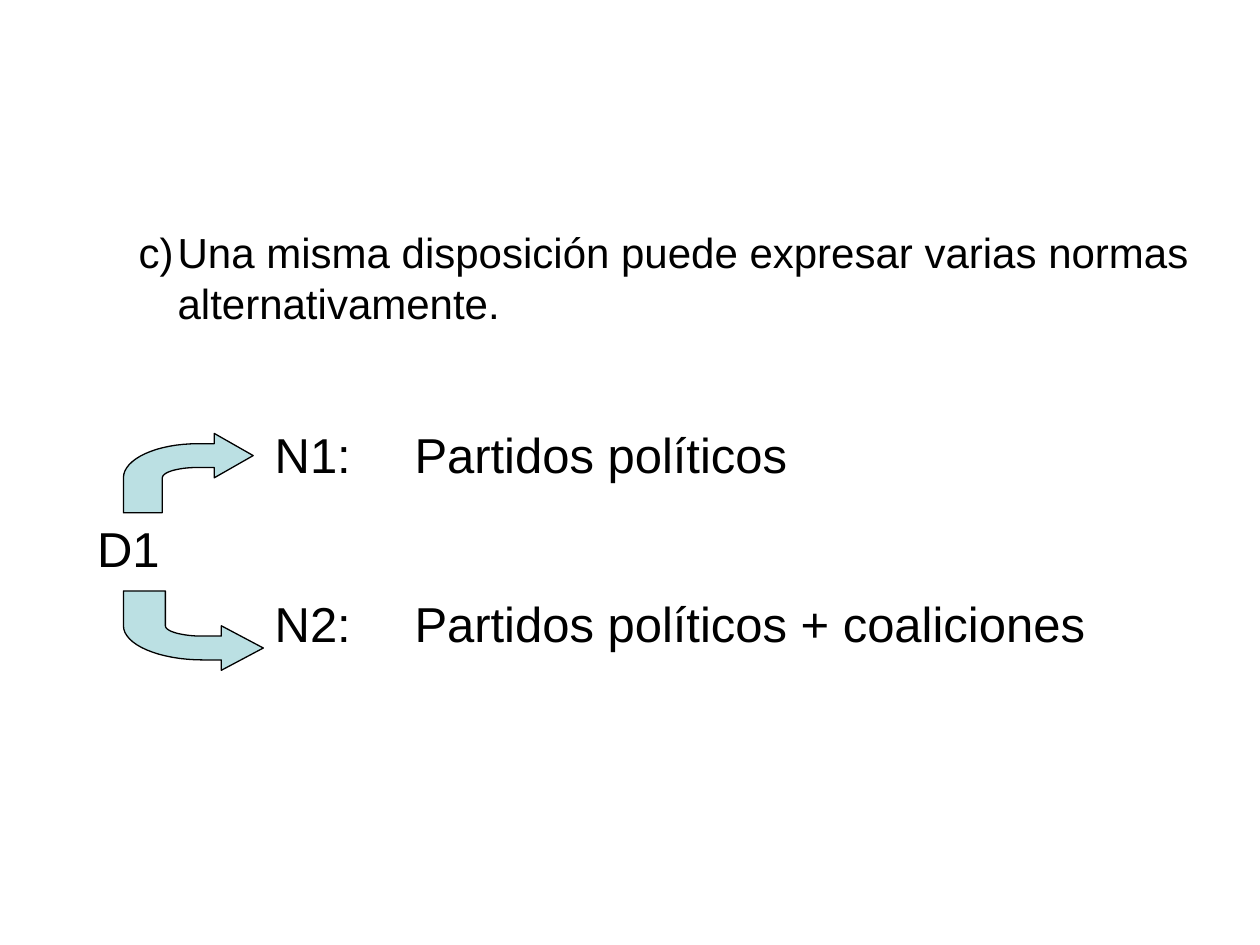
import math
from dataclasses import dataclass

import pptx
import pptx.dml.color
import pptx.enum.text
import pptx.oxml.ns
import pptx.util
from lxml import etree

Inches = pptx.util.Inches
Pt = pptx.util.Pt

BLACK, WHITE, PALE_TEAL = "000000", "FFFFFF", "BBE0E3"


@dataclass
class CurvedArrow:
    left: float
    top: float
    width: float
    height: float
    points_up: bool


@dataclass
class CellText:
    row: int
    column: int
    text: str


ARROWS = [
    CurvedArrow(0.98, 3.44, 1.03, 0.63, points_up=True),
    CurvedArrow(0.98, 4.69, 1.11, 0.63, points_up=False),
]
CELLS = [
    CellText(0, 1, "N1:"),
    CellText(0, 2, "Partidos políticos"),
    CellText(1, 0, "D1"),
    CellText(2, 1, "N2:"),
    CellText(2, 2, "Partidos políticos + coaliciones"),
]
COLUMN_WIDTHS = [1.41, 1.11, 6.3]
ROW_HEIGHTS = [0.74, 0.6, 0.69]


def rgb(color: str) -> pptx.dml.color.RGBColor:
    return pptx.dml.color.RGBColor.from_string(color)


def add_text(paragraph, text: str, *, size: float, font: str = "Arial",
             color: str = BLACK) -> None:
    run = paragraph.add_run()
    run.text = text
    run.font.size = Pt(size)
    run.font.name = font
    run.font.color.rgb = rgb(color)


def fill_body(shape) -> None:
    shape.left, shape.top = Inches(0.5), Inches(1.75)
    shape.width, shape.height = Inches(9.5), Inches(4.95)
    shape.fill.solid()
    shape.fill.fore_color.rgb = rgb(WHITE)
    frame = shape.text_frame
    frame.auto_size = pptx.enum.text.MSO_AUTO_SIZE.NONE
    frame.vertical_anchor = pptx.enum.text.MSO_ANCHOR.TOP
    paragraph = frame.paragraphs[0]
    paragraph.level = 1
    paragraph.space_before = Pt(0)
    properties = paragraph._p.get_or_add_pPr()
    properties.set("marL", str(Inches(0.81)))
    properties.set("indent", str(Inches(-0.31)))
    etree.SubElement(properties, pptx.oxml.ns.qn("a:buNone"))
    add_text(paragraph, "c)\tUna misma disposición puede expresar varias normas alternativamente.",
             size=24)


def add_norm_table(slide) -> None:
    table = slide.shapes.add_table(
        len(ROW_HEIGHTS), len(COLUMN_WIDTHS), Inches(0.67), Inches(3.36),
        Inches(sum(COLUMN_WIDTHS)), Inches(sum(ROW_HEIGHTS))).table
    table.first_row = table.horz_banding = False
    for column, width in zip(table.columns, COLUMN_WIDTHS):
        column.width = Inches(width)
    for row, height in zip(table.rows, ROW_HEIGHTS):
        row.height = Inches(height)
    for cell in table.iter_cells():
        cell.fill.background()
    for item in CELLS:
        paragraph = table.cell(item.row, item.column).text_frame.paragraphs[0]
        add_text(paragraph, item.text, size=28)


def quarter_arc(radius_x: float, radius_y: float, start: int, end: int) -> list[tuple[float, float]]:
    """Return points of the bend, around the centre its two edges share."""
    steps = 16
    angles = [math.radians(start + (end - start) * step / steps) for step in range(steps + 1)]
    return [(0.57 - radius_x * math.cos(angle), 0.56 - radius_y * math.sin(angle))
            for angle in angles]


def add_curved_arrow(slide, arrow: CurvedArrow) -> None:
    outline = [(1, 0.28), (0.7, 0), (0.7, 0.13)]
    outline += quarter_arc(0.57, 0.43, 90, 0)
    outline += [(0, 1), (0.3, 1)]
    outline += quarter_arc(0.27, 0.13, 0, 90)
    outline += [(0.7, 0.43), (0.7, 0.56)]
    points = [
        (Inches(arrow.left + arrow.width * x),
         Inches(arrow.top + arrow.height * (y if arrow.points_up else 1 - y)))
        for x, y in outline
    ]
    builder = slide.shapes.build_freeform(*points[0])
    builder.add_line_segments(points[1:], close=True)
    shape = builder.convert_to_shape()
    shape.shadow.inherit = False
    shape.fill.solid()
    shape.fill.fore_color.rgb = rgb(PALE_TEAL)
    shape.line.color.rgb = rgb(BLACK)
    shape.line.width = Pt(0.75)


def main() -> None:
    presentation = pptx.Presentation()
    presentation.slide_width, presentation.slide_height = Inches(10), Inches(7.5)
    slide = presentation.slides.add_slide(presentation.slide_layouts[1])
    title = slide.shapes.title
    title.element.getparent().remove(title.element)
    fill_body(slide.placeholders[1])
    add_norm_table(slide)
    for arrow in ARROWS:
        add_curved_arrow(slide, arrow)
    presentation.save("out.pptx")


if __name__ == "__main__":
    main()
